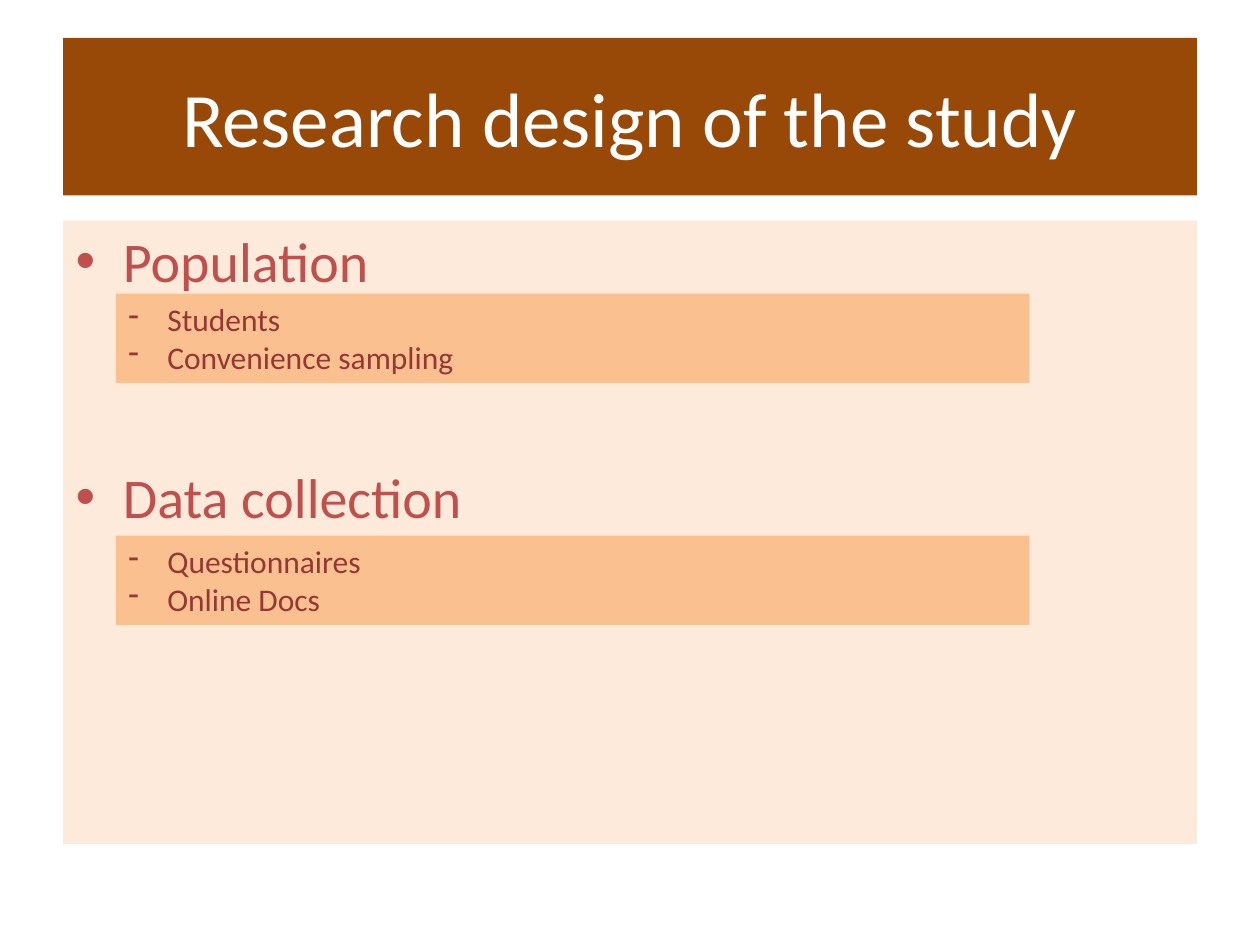
from dataclasses import dataclass

from lxml import etree
from pptx import Presentation
from pptx.dml.color import RGBColor
from pptx.enum.text import MSO_ANCHOR, MSO_AUTO_SIZE, PP_ALIGN
from pptx.oxml.ns import qn
from pptx.util import Inches, Pt

MIDDLE, TOP = MSO_ANCHOR.MIDDLE, MSO_ANCHOR.TOP
CENTER, LEFT = PP_ALIGN.CENTER, PP_ALIGN.LEFT
FIT_SHAPE, NO_FIT = MSO_AUTO_SIZE.SHAPE_TO_FIT_TEXT, MSO_AUTO_SIZE.NONE


@dataclass(frozen=True)
class Theme:
    font: str = "Calibri"
    banner: str = "984807"
    banner_text: str = "FFFFFF"
    panel: str = "FDEADA"
    topic: str = "C0504D"
    detail_box: str = "FAC090"
    detail: str = "953735"
    title_size: int = 44
    topic_size: int = 32
    detail_size: int = 18


THEME = Theme()
TITLE = "Research design of the study"
TOPICS = [
    ("Population", ["Students", "Convenience sampling"], 2.33),
    ("Data collection", ["Questionnaires", "Online Docs"], 4.25),
]


def place(box, left, top, width, height, fill):
    box.left, box.top = Inches(left), Inches(top)
    box.width, box.height = Inches(width), Inches(height)
    box.fill.solid()
    box.fill.fore_color.rgb = RGBColor.from_string(fill)


def write_lines(frame, lines, size, color, align):
    frame.text = "\n".join(lines)
    frame.word_wrap = True
    for paragraph in frame.paragraphs:
        paragraph.alignment = align
        for run in paragraph.runs:
            run.font.name = THEME.font
            run.font.size = Pt(size)
            run.font.color.rgb = RGBColor.from_string(color)


def set_bullet(paragraph, mark, indent):
    properties = paragraph._p.get_or_add_pPr()
    properties.set("marL", str(Inches(indent)))
    properties.set("indent", str(-Inches(indent)))
    etree.SubElement(properties, qn("a:buFontTx"))
    etree.SubElement(properties, qn("a:buChar")).set("char", mark)


def add_title(slide):
    banner = slide.shapes.title
    place(banner, 0.5, 0.3, 9, 1.25, THEME.banner)
    write_lines(banner.text_frame, [TITLE], THEME.title_size, THEME.banner_text, CENTER)
    banner.text_frame.vertical_anchor = MIDDLE
    banner.text_frame.auto_size = NO_FIT


def add_topics(slide):
    panel = slide.placeholders[1]
    place(panel, 0.5, 1.75, 9, 4.95, THEME.panel)
    frame = panel.text_frame
    write_lines(frame, [topic for topic, _, _ in TOPICS], THEME.topic_size, THEME.topic, LEFT)
    frame.vertical_anchor = TOP
    frame.auto_size = NO_FIT
    for paragraph in frame.paragraphs[1:]:
        paragraph.space_before = Pt(96)


def add_details(slide, details, top):
    detail_box = slide.shapes.add_textbox(0, 0, 0, 0)
    place(detail_box, 0.92, top, 7.25, 0.71, THEME.detail_box)
    frame = detail_box.text_frame
    write_lines(frame, details, THEME.detail_size, THEME.detail, LEFT)
    frame.auto_size = FIT_SHAPE
    for paragraph in frame.paragraphs:
        set_bullet(paragraph, "-", 0.31)


def main():
    deck = Presentation()
    deck.slide_width, deck.slide_height = Inches(10), Inches(7.5)
    slide = deck.slides.add_slide(deck.slide_layouts[1])
    add_title(slide)
    add_topics(slide)
    for _, details, top in TOPICS:
        add_details(slide, details, top)
    deck.save("out.pptx")


if __name__ == "__main__":
    main()
